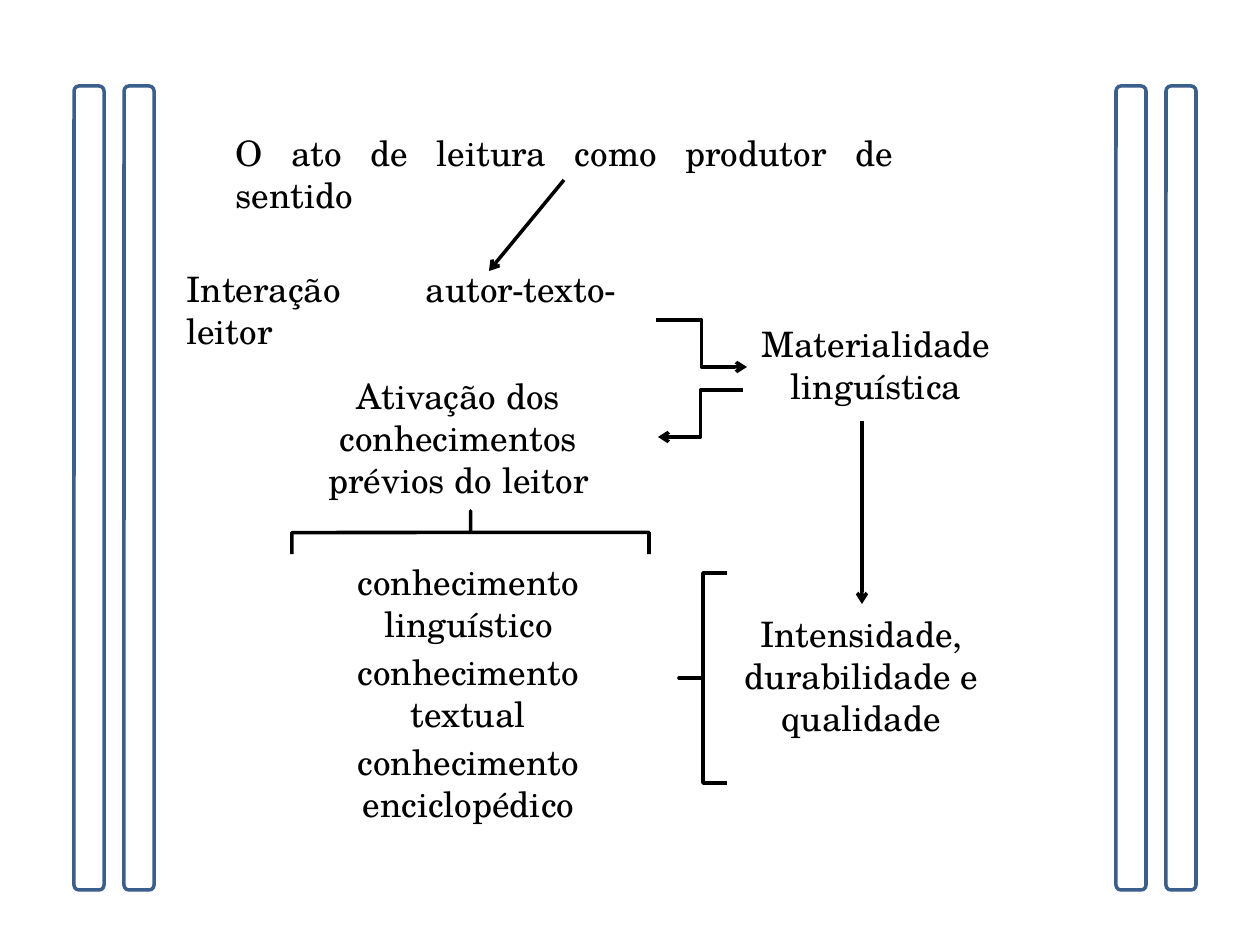
from dataclasses import dataclass

from lxml.etree import SubElement
from pptx import Presentation
from pptx.dml.color import RGBColor
from pptx.enum.shapes import MSO_CONNECTOR as CONN, MSO_SHAPE as SHAPE
from pptx.enum.text import MSO_ANCHOR as ANCHOR, MSO_AUTO_SIZE as FIT, PP_ALIGN as ALIGN
from pptx.oxml.ns import qn
from pptx.util import Emu, Pt

PX_PER_INCH = 126
COLORS = {"text": "000000", "arrow": "000000", "bar": "3A5F8C", "paper": "FFFFFF"}
FONT = {"name": "TeX Gyre Schola", "size": Pt(20), "bold": False}
FRAME = {"word_wrap": True, "auto_size": FIT.SHAPE_TO_FIT_TEXT, "vertical_anchor": ANCHOR.TOP}


@dataclass
class Label:
    x: int
    y: int
    w: int
    h: int
    paragraphs: tuple[str, ...]
    align: ALIGN = ALIGN.CENTER


@dataclass
class Arrow:
    start: tuple[int, int]
    end: tuple[int, int]
    kind: CONN = CONN.STRAIGHT


@dataclass
class Brace:
    x: int
    y: int
    w: int
    h: int
    rotation: int = 0


TITLE = Label(223, 125, 683, 55, ("O ato de leitura como produtor de sentido",), ALIGN.JUSTIFY)
LABELS = [
    Label(174, 261, 455, 55, ("Interação autor-texto-leitor",), ALIGN.JUSTIFY),
    Label(748, 316, 256, 97, ("Materialidade linguística",)),
    Label(301, 368, 315, 140, ("Ativação dos conhecimentos prévios do leitor",)),
    Label(704, 606, 315, 140, ("Intensidade,", "durabilidade e qualidade")),
]
KNOWLEDGE = ["linguístico", "textual", "enciclopédico"]
LABELS += [Label(311, 554 + 90 * i, 315, 97, (f"conhecimento {kind}",))
           for i, kind in enumerate(KNOWLEDGE)]
ARROWS = [
    Arrow((564, 180), (489, 271)),
    Arrow((656, 320), (747, 367), CONN.ELBOW),
    Arrow((743, 390), (658, 437), CONN.ELBOW),
    Arrow((862, 421), (862, 604)),
]
BRACES = [Brace(449, 354, 43, 357, 90), Brace(679, 573, 48, 210)]
BAR_LEFTS = [74, 124, 1116, 1166]


def px(n: int) -> Emu:
    return Emu(round(n * 914400 / PX_PER_INCH))


def color(name: str) -> RGBColor:
    return RGBColor.from_string(COLORS[name])


def set_attrs(obj, values: dict) -> None:
    for name, value in values.items():
        setattr(obj, name, value)


def set_line(sp, name: str) -> None:
    sp.line.color.rgb = color(name)
    sp.line.width = Pt(2)


def write_label(sp, label: Label) -> None:
    box = (label.x, label.y, label.w, label.h)
    set_attrs(sp, dict(zip(("left", "top", "width", "height"), map(px, box))))
    tf = sp.text_frame
    set_attrs(tf, FRAME)
    tf.text = "\n".join(label.paragraphs)
    for p in tf.paragraphs:
        p.alignment = label.align
        for r in p.runs:
            set_attrs(r.font, FONT)
            r.font.color.rgb = color("text")


def draw_bar(slide, left: int) -> None:
    sp = slide.shapes.add_shape(SHAPE.ROUNDED_RECTANGLE, px(left), px(86), px(30), px(804))
    sp.shadow.inherit = False
    sp.fill.solid()
    sp.fill.fore_color.rgb = color("paper")
    set_line(sp, "bar")


def draw_brace(slide, brace: Brace) -> None:
    sp = slide.shapes.add_shape(SHAPE.LEFT_BRACE, px(brace.x), px(brace.y),
                                px(brace.w), px(brace.h))
    sp.rotation = brace.rotation
    sp.adjustments[0] = 0  # square corners
    sp.adjustments[1] = 0.5
    sp.shadow.inherit = False
    sp.fill.background()
    set_line(sp, "arrow")


def draw_arrow(slide, arrow: Arrow) -> None:
    sp = slide.shapes.add_connector(arrow.kind, *map(px, arrow.start + arrow.end))
    set_line(sp, "arrow")
    SubElement(sp.line._get_or_add_ln(), qn("a:tailEnd"), type="arrow")
    SubElement(sp._element.spPr, qn("a:effectLst"))


def main() -> None:
    prs = Presentation()
    prs.slide_width, prs.slide_height = px(1260), px(945)
    slide = prs.slides.add_slide(prs.slide_layouts[5])

    # Side bars
    for left in BAR_LEFTS:
        draw_bar(slide, left)

    # Heading and labels
    write_label(slide.shapes.title, TITLE)
    for label in LABELS:
        write_label(slide.shapes.add_textbox(0, 0, 0, 0), label)

    # Arrows and braces
    for arrow in ARROWS:
        draw_arrow(slide, arrow)
    for brace in BRACES:
        draw_brace(slide, brace)

    prs.save("out.pptx")


if __name__ == "__main__":
    main()
